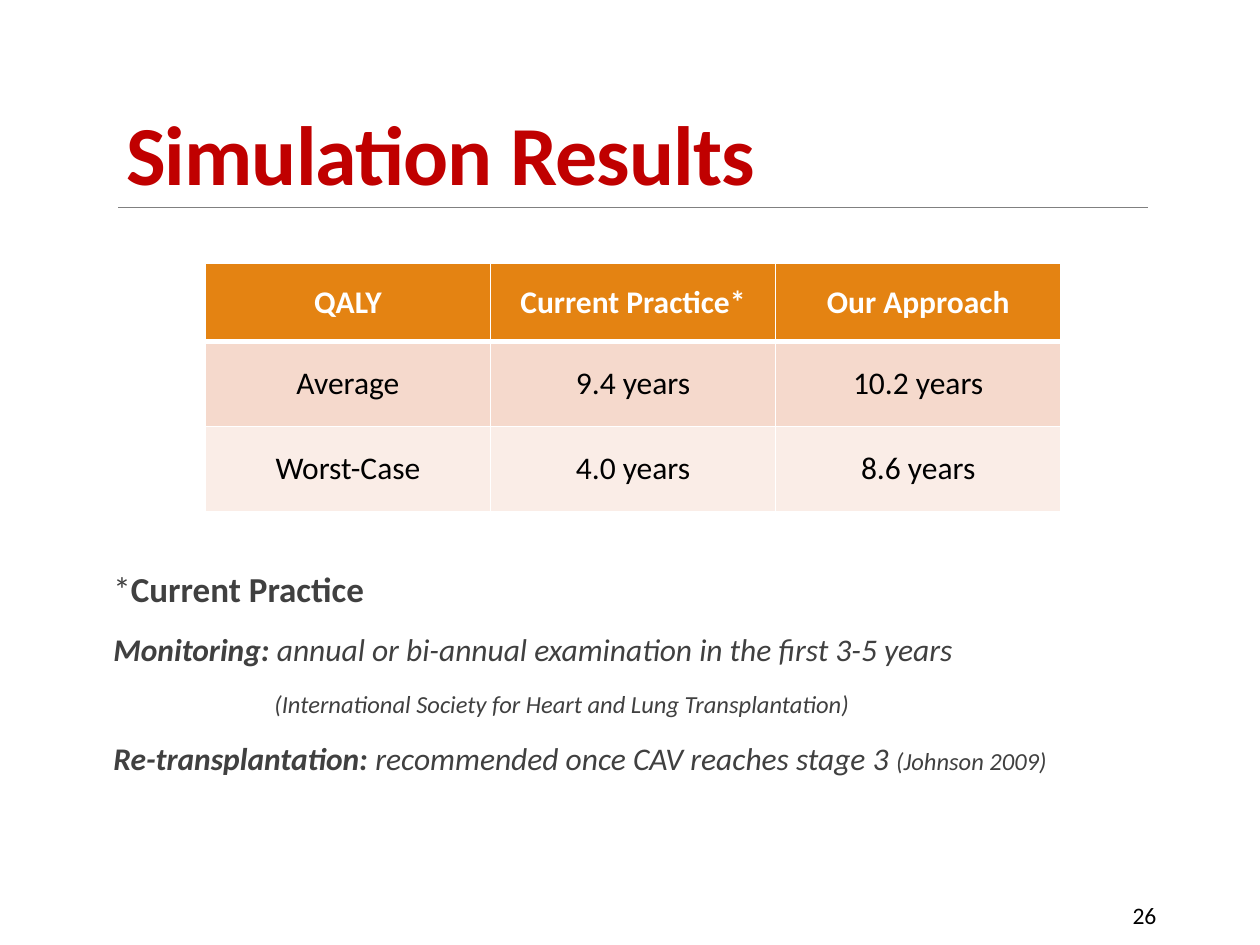
from dataclasses import dataclass

from lxml.etree import SubElement
from pptx import Presentation
from pptx.dml.color import RGBColor
from pptx.enum.shapes import MSO_CONNECTOR
from pptx.enum.text import MSO_ANCHOR, MSO_AUTO_SIZE, PP_ALIGN
from pptx.oxml.ns import qn
from pptx.util import Pt


@dataclass(frozen=True)
class Theme:
    font: str = "Calibri"
    title: str = "C00000"
    rule: str = "808080"
    header: str = "E48312"
    bands: tuple = ("F5D9CC", "FAEDE7")
    white: str = "FFFFFF"
    black: str = "000000"
    note: str = "404040"
    title_size: float = 48
    heading_size: float = 20
    text_size: float = 18
    citation_size: float = 14
    number_size: float = 13.5


THEME = Theme()

RESULTS = [
    ["QALY", "Current Practice*", "Our Approach"],
    ["Average", "9.4 years", "10.2 years"],
    ["Worst-Case", "4.0 years", "8.6 years"],
]
ROW_HEIGHTS = [44.64, 48.6, 48.6]
COLUMN_WIDTH = 162.96

HEADING = {"size": Pt(THEME.heading_size)}
DETAIL = {"size": Pt(THEME.text_size), "italic": True}
LABEL = {**DETAIL, "bold": True}
CITATION = {**DETAIL, "size": Pt(THEME.citation_size)}

# Each note is its left indent in points and its spans of text and format.
NOTES = [
    (0, [("*", HEADING), ("Current Practice", {**HEADING, "bold": True})]),
    (0, [("Monitoring: ", LABEL),
         ("annual or bi-annual examination in the first 3-5 years", DETAIL)]),
    (92, [("(International Society for Heart and Lung Transplantation)", CITATION)]),
    (0, [("Re-transplantation: ", LABEL),
         ("recommended once CAV reaches stage 3 ", DETAIL),
         ("(Johnson 2009)", CITATION)]),
]


def set_attributes(target, values):
    for name, value in values.items():
        setattr(target, name, value)


def place(shape, left, top, width, height):
    set_attributes(shape, {"left": Pt(left), "top": Pt(top),
                           "width": Pt(width), "height": Pt(height)})


def add_span(para, text, color, values):
    span = para.add_run()
    span.text = text
    set_attributes(span.font, {"name": THEME.font, **values})
    span.font.color.rgb = RGBColor.from_string(color)
    return span


def add_title(page, text):
    title = page.shapes.title
    place(title, 64.8, 5.04, 594, 114.48)
    set_attributes(title.text_frame, {"vertical_anchor": MSO_ANCHOR.BOTTOM,
                                      "auto_size": MSO_AUTO_SIZE.NONE,
                                      "word_wrap": True})
    para = title.text_frame.paragraphs[0]
    set_attributes(para, {"alignment": PP_ALIGN.LEFT, "line_spacing": 0.85})
    span = add_span(para, text, THEME.title,
                    {"size": Pt(THEME.title_size), "bold": True})
    span.font._element.set("spc", "-50")


def add_rule(page):
    rule = page.shapes.add_connector(
        MSO_CONNECTOR.STRAIGHT, Pt(67.68), Pt(118.8), Pt(655.92), Pt(118.8))
    rule.line.color.rgb = RGBColor.from_string(THEME.rule)
    rule.line.width = Pt(0.5)
    SubElement(rule._element.spPr, qn("a:effectLst"))


def add_borders(cell, widths):
    """Draw white cell borders; widths maps a border tag to points."""
    properties = cell._tc.get_or_add_tcPr()
    for tag, width in widths.items():
        border = SubElement(properties, qn(f"a:{tag}"), w=str(Pt(width)))
        fill = SubElement(border, qn("a:solidFill"))
        SubElement(fill, qn("a:srgbClr"), val=THEME.white)


def format_cell(cell, text, row_index):
    is_header = row_index == 0
    add_borders(cell, {"lnL": 1, "lnR": 1, "lnT": 3 if row_index == 1 else 1,
                       "lnB": 3 if is_header else 1})
    cell.fill.solid()
    cell.fill.fore_color.rgb = RGBColor.from_string(
        THEME.header if is_header else THEME.bands[(row_index - 1) % 2])
    cell.vertical_anchor = MSO_ANCHOR.MIDDLE
    para = cell.text_frame.paragraphs[0]
    para.alignment = PP_ALIGN.CENTER
    add_span(para, text, THEME.white if is_header else THEME.black,
             {"size": Pt(THEME.text_size), "bold": is_header})


def add_results_table(page):
    columns = len(RESULTS[0])
    table = page.shapes.add_table(
        len(RESULTS), columns, Pt(117.36), Pt(150.48),
        Pt(COLUMN_WIDTH * columns), Pt(sum(ROW_HEIGHTS))).table
    for column in table.columns:
        column.width = Pt(COLUMN_WIDTH)
    for row_index, (texts, height) in enumerate(zip(RESULTS, ROW_HEIGHTS)):
        table.rows[row_index].height = Pt(height)
        for column_index, text in enumerate(texts):
            format_cell(table.cell(row_index, column_index), text, row_index)


def add_notes_box(page):
    box = page.shapes.add_textbox(Pt(64.8), Pt(323.28), Pt(828), Pt(141.12))
    frame = box.text_frame
    set_attributes(frame, {"word_wrap": True, "margin_left": 0, "margin_right": 0})
    for index, (indent, spans) in enumerate(NOTES):
        para = frame.add_paragraph() if index else frame.paragraphs[0]
        set_attributes(para, {"line_spacing": 0.9, "space_before": Pt(12),
                              "space_after": Pt(2)})
        if indent:
            para._p.get_or_add_pPr().set("marL", str(Pt(indent)))
        for text, values in spans:
            add_span(para, text, THEME.note, values)


def add_page_number(page, number):
    box = page.shapes.add_textbox(Pt(640.08), Pt(511.2), Pt(77.76), Pt(28.8))
    box.text_frame.word_wrap = True
    add_span(box.text_frame.paragraphs[0], number, THEME.black,
             {"size": Pt(THEME.number_size)})


def main():
    deck = Presentation()
    set_attributes(deck, {"slide_width": Pt(720), "slide_height": Pt(540)})
    page = deck.slides.add_slide(deck.slide_layouts[5])
    add_rule(page)
    add_title(page, "Simulation Results")
    add_results_table(page)
    add_notes_box(page)
    add_page_number(page, "26")
    deck.save("out.pptx")


if __name__ == "__main__":
    main()
